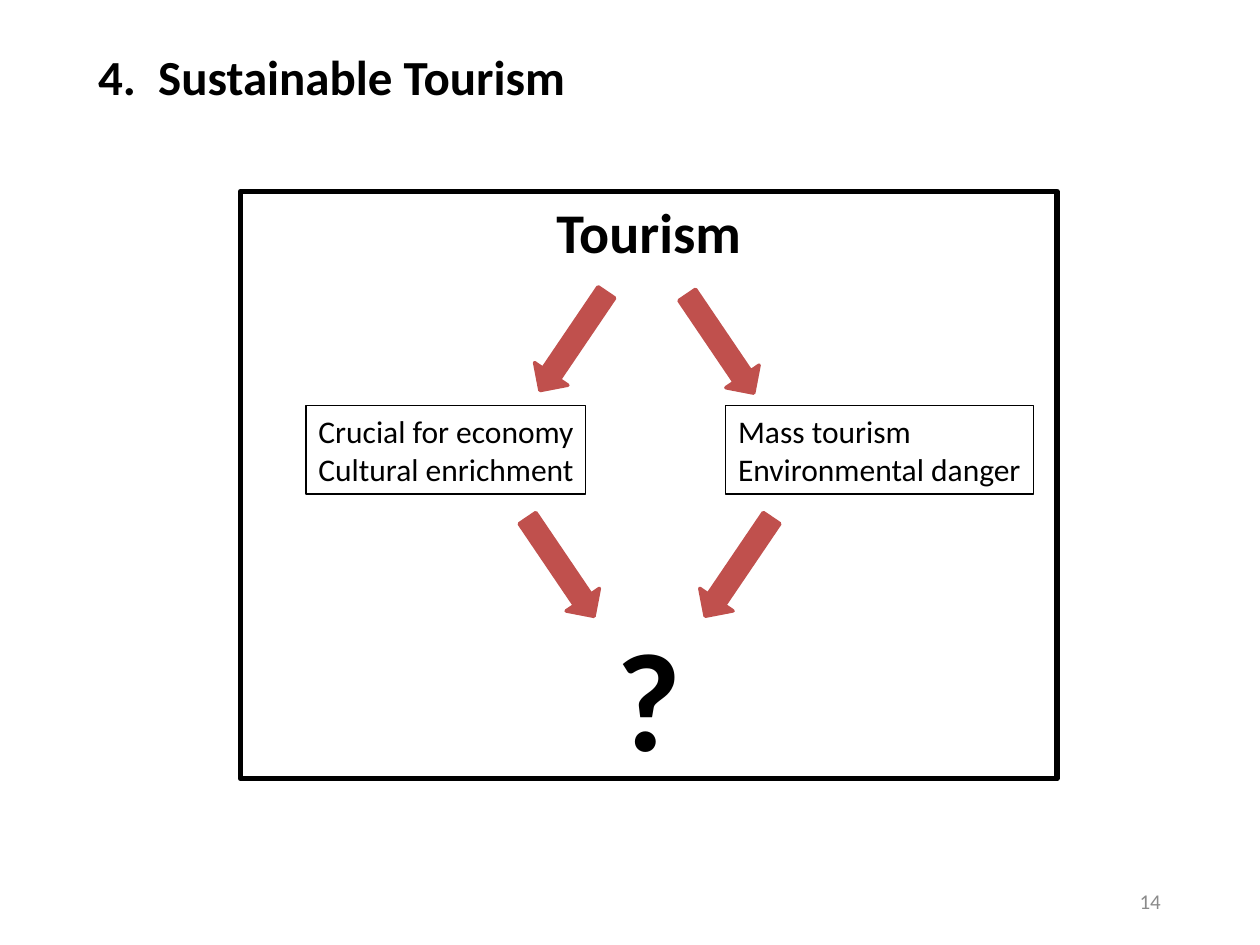
from pptx import Presentation
from pptx.dml.color import RGBColor
from pptx.enum.shapes import MSO_SHAPE as SHAPE
from pptx.enum.text import MSO_ANCHOR as ANCHOR, PP_ALIGN as ALIGN
from pptx.util import Cm, Pt

TILT = 34.1


def rgb(color):
    return RGBColor.from_string(color)


class Deck:
    font = "Calibri"
    ink, accent, muted = "000000", "C0504D", "8B8B8B"

    def __init__(self, slide):
        self.s = slide

    def run(self, p, text, size, bold=False, color=ink):
        r = p.add_run()
        r.text = text
        r.font.name = self.font
        r.font.size = Pt(size)
        r.font.bold = bold
        r.font.color.rgb = rgb(color)

    def text(self, x, y, w, h, text, size, bold=False, color=ink,
             align=ALIGN.LEFT, anchor=ANCHOR.TOP, wrap=True):
        tf = self.s.shapes.add_textbox(Cm(x), Cm(y), Cm(w), Cm(h)).text_frame
        tf.word_wrap = wrap
        tf.vertical_anchor = anchor
        p = tf.paragraphs[0]
        p.alignment = align
        self.run(p, text, size, bold, color)

    def shape(self, kind, x, y, w, h, line, weight, fill=None):
        sp = self.s.shapes.add_shape(kind, Cm(x), Cm(y), Cm(w), Cm(h))
        sp.shadow.inherit = False
        if fill:
            sp.fill.solid()
            sp.fill.fore_color.rgb = rgb(fill)
        else:
            sp.fill.background()
        sp.line.color.rgb = rgb(line)
        sp.line.width = Pt(weight)
        return sp

    def frame(self, x, y, w, h, heading, question):
        """Large outlined box with a heading on top and a question mark below."""
        tf = self.shape(SHAPE.RECTANGLE, x, y, w, h, self.ink, 3).text_frame
        tf.word_wrap = True
        tf.vertical_anchor = ANCHOR.TOP
        p = tf.paragraphs[0]
        p.alignment = ALIGN.CENTER
        self.run(p, heading, 32, bold=True)
        p = tf.add_paragraph()
        p.alignment = ALIGN.CENTER
        p.space_before = Pt(198)
        self.run(p, question, 80, bold=True)

    def box(self, x, y, w, h, lines):
        tf = self.shape(SHAPE.RECTANGLE, x, y, w, h, self.ink, 0.75).text_frame
        tf.word_wrap = False
        tf.vertical_anchor = ANCHOR.TOP
        p = tf.paragraphs[0]
        p.alignment = ALIGN.LEFT
        for i, line in enumerate(lines):
            if i:
                p.add_line_break()
            self.run(p, line, 18)

    def arrow(self, x, y, angle):
        sp = self.shape(SHAPE.DOWN_ARROW, x, y, 0.81, 2.39,
                        self.accent, 2, self.accent)
        sp.rotation = angle


def main():
    prs = Presentation()
    prs.slide_width, prs.slide_height = Cm(25.4), Cm(19.05)
    deck = Deck(prs.slides.add_slide(prs.slide_layouts[6]))

    deck.text(17.93, 17.65, 5.72, 1.02, "14", 12, color=deck.muted,
              align=ALIGN.RIGHT, anchor=ANCHOR.MIDDLE)
    deck.text(1.73, 0.81, 9.91, 1.45, "4.  Sustainable Tourism", 28,
              bold=True, wrap=False)
    deck.frame(4.85, 3.86, 16.46, 11.84, "Tourism", "?")
    deck.box(6.17, 8.18, 5.64, 1.78, ["Crucial for economy", "Cultural enrichment"])
    deck.box(14.63, 8.18, 6.2, 1.78, ["Mass tourism", "Environmental danger"])
    for x, y, angle in [(14.12, 5.74, -TILT), (11.15, 5.69, TILT),
                        (10.9, 10.24, -TILT), (14.48, 10.24, TILT)]:
        deck.arrow(x, y, angle)

    prs.save("out.pptx")


if __name__ == "__main__":
    main()
